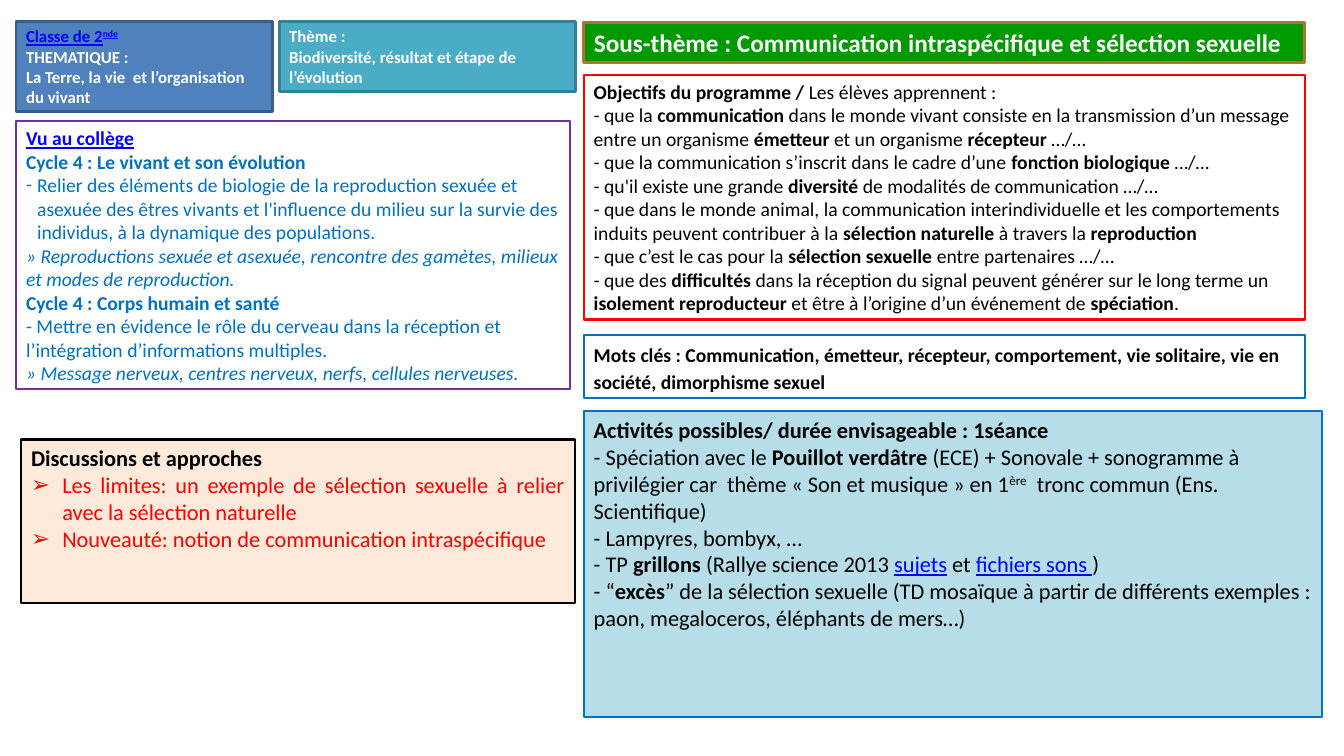
"""Builds a one-slide lesson sheet on communication within species and sexual selection."""
import dataclasses

import lxml.etree
import pptx
import pptx.dml.color
import pptx.enum.shapes
import pptx.enum.text
import pptx.oxml.ns
import pptx.util

PX = 9144
ALIGN = pptx.enum.text.PP_ALIGN


@dataclasses.dataclass(frozen=True)
class Theme:
    font: str = "Calibri"
    small: int = 12
    body: int = 14
    large: int = 16
    title: int = 18
    black: str = "000000"
    white: str = "FFFFFF"
    link: str = "0000FF"
    red: str = "FF0000"
    blue: str = "0070C0"
    purple: str = "7030A0"
    green: str = "009900"
    brown: str = "B76F34"
    class_fill: str = "4F81BD"
    class_line: str = "3A5F8C"
    theme_fill: str = "4BACC6"
    theme_line: str = "377F92"
    peach: str = "FDEADA"
    sky: str = "B7DEE8"


THEME = Theme()


def rgb(value):
    return pptx.dml.color.RGBColor.from_string(value)


def write(frame, text, size=THEME.body, color=THEME.black, bold=False, italic=False,
          align=ALIGN.LEFT, bullet=None, indent=0, level=0, spacing=None, after=None):
    """Add a paragraph; | parts spans, and a leading * means bold, _ link, ^ superscript."""
    para = frame.paragraphs[0]
    if para.runs:
        para = frame.add_paragraph()
    para.alignment = align
    para.level = level
    if spacing:
        para.line_spacing = spacing
    if after:
        para.space_after = pptx.util.Pt(after)
    if bullet:
        properties = para._p.get_or_add_pPr()
        properties.set("marL", str(indent * PX))
        properties.set("indent", str(-indent * PX))
        bullet_color = lxml.etree.SubElement(properties, pptx.oxml.ns.qn("a:buClr"))
        lxml.etree.SubElement(bullet_color, pptx.oxml.ns.qn("a:srgbClr"), val=color)
        lxml.etree.SubElement(properties, pptx.oxml.ns.qn("a:buFont"), typeface=THEME.font)
        lxml.etree.SubElement(properties, pptx.oxml.ns.qn("a:buChar"), char=bullet)
    for piece in text.split("|"):
        words = piece.lstrip("*_^")
        marks = piece[:len(piece) - len(words)]
        span = para.add_run()
        span.text = words
        span.font.name = THEME.font
        span.font.size = pptx.util.Pt(size)
        span.font.bold = bold or "*" in marks
        span.font.italic = italic
        span.font.underline = "_" in marks
        span.font.color.rgb = rgb(THEME.link if "_" in marks else color)
        if "^" in marks:
            span.font._element.set("baseline", "30000")


deck = pptx.Presentation()
deck.slide_width = 1333 * PX
deck.slide_height = 750 * PX
page = deck.slides.add_slide(deck.slide_layouts[5])

heading = dict(size=THEME.small, color=THEME.white, bold=True)
college = dict(color=THEME.blue)
debate = dict(size=THEME.large, color=THEME.red, align=ALIGN.JUSTIFY,
              bullet="➢", indent=31, level=1)
activity = dict(size=THEME.large)

boxes = [
    ((16, 21, 254, 90), THEME.class_fill, THEME.class_line, 2, [
        ("_Classe de 2|_^nde", heading),
        ("THEMATIQUE :", heading),
        ("La Terre, la vie  et l’organisation du vivant", heading),
    ]),
    ((579, 22, 715, 40), THEME.green, THEME.brown, 2, [
        ("Sous-thème : Communication intraspécifique et sélection sexuelle",
         dict(size=THEME.title, color=THEME.white, bold=True)),
    ]),
    ((277, 21, 294, 70), THEME.theme_fill, THEME.theme_line, 2, [
        ("Thème :", heading),
        ("Biodiversité, résultat et étape de l’évolution", heading),
    ]),
    ((579, 74, 715, 243), None, THEME.red, 1.5, [
        ("*Objectifs du programme / |Les élèves apprennent :", dict(align=ALIGN.JUSTIFY)),
        ("- que la |*communication| dans le monde vivant consiste en la transmission d’un "
         "message entre un organisme |*émetteur| et un organisme |*récepteur| …/…", {}),
        ("- que la communication s’inscrit dans le cadre d’une |*fonction biologique| …/…", {}),
        ("- qu'il existe une grande |*diversité| de modalités de communication …/…", {}),
        ("- que dans le monde animal, la communication interindividuelle et les "
         "comportements induits peuvent contribuer à la |*sélection naturelle| à travers la "
         "|*reproduction", {}),
        ("- que c’est le cas pour la |*sélection sexuelle| entre partenaires …/…", {}),
        ("- que des |*difficultés| dans la réception du signal peuvent générer sur le long "
         "terme un |*isolement reproducteur| et être à l’origine d’un événement de "
         "|*spéciation|.", {}),
    ]),
    ((16, 120, 549, 266), None, THEME.purple, 1.5, [
        ("*_Vu au collège", {}),
        ("*Cycle 4 : Le vivant et son évolution", college),
        ("Relier des éléments de biologie de la reproduction sexuée et asexuée des êtres "
         "vivants et l'influence du milieu sur la survie des individus, à la dynamique des "
         "populations.", dict(college, bullet="-", indent=11)),
        ("» Reproductions sexuée et asexuée, rencontre des gamètes, milieux et modes de "
         "reproduction.", dict(college, italic=True)),
        ("*Cycle 4 : Corps humain et santé", college),
        ("- Mettre en évidence le rôle du cerveau dans la réception et l’intégration "
         "d’informations multiples.", college),
        ("» Message nerveux, centres nerveux, nerfs, cellules nerveuses.",
         dict(college, italic=True)),
    ]),
    ((21, 436, 549, 162), THEME.peach, THEME.black, 1.5, [
        ("*Discussions et approches", dict(size=THEME.large, align=ALIGN.JUSTIFY)),
        ("Les limites: un exemple de sélection sexuelle à relier avec la sélection naturelle",
         debate),
        ("Nouveauté: notion de communication intraspécifique", debate),
    ]),
    ((579, 408, 732, 303), THEME.sky, THEME.blue, 1.5, [
        ("*Activités possibles/ durée envisageable : 1séance",
         dict(activity, align=ALIGN.JUSTIFY)),
        ("- Spéciation avec le |*Pouillot verdâtre |(ECE) + Sonovale + sonogramme à "
         "privilégier car  thème « Son et musique » en 1|^ère|  tronc commun "
         "(Ens. Scientifique)", activity),
        ("- Lampyres, bombyx, …", activity),
        ("- TP |*grillons| (Rallye science 2013 |_sujets| et |_fichiers sons |)", activity),
        ("- “|*excès|” de la sélection sexuelle (TD mosaïque à partir de différents "
         "exemples : paon, megaloceros, éléphants de mers…)", activity),
    ]),
    ((579, 332, 715, 63), None, THEME.blue, 1.5, [
        ("Mots clés : Communication, émetteur, récepteur, comportement, vie solitaire, vie "
         "en société, dimorphisme sexuel", dict(bold=True, spacing=1.15, after=10)),
    ]),
]

for place, fill, line, weight, paragraphs in boxes:
    left, top, width, height = [length * PX for length in place]
    if fill == THEME.green:
        box = page.shapes.title
        box.left, box.top, box.width, box.height = left, top, width, height
    else:
        box = page.shapes.add_shape(
            pptx.enum.shapes.MSO_SHAPE.RECTANGLE, left, top, width, height)
        box.shadow.inherit = False
    if fill:
        box.fill.solid()
        box.fill.fore_color.rgb = rgb(fill)
    else:
        box.fill.background()
    box.line.color.rgb = rgb(line)
    box.line.width = pptx.util.Pt(weight)
    frame = box.text_frame
    frame.word_wrap = True
    frame.auto_size = pptx.enum.text.MSO_AUTO_SIZE.NONE
    frame.vertical_anchor = pptx.enum.text.MSO_ANCHOR.TOP
    for text, style in paragraphs:
        write(frame, text, **style)

deck.save("out.pptx")
